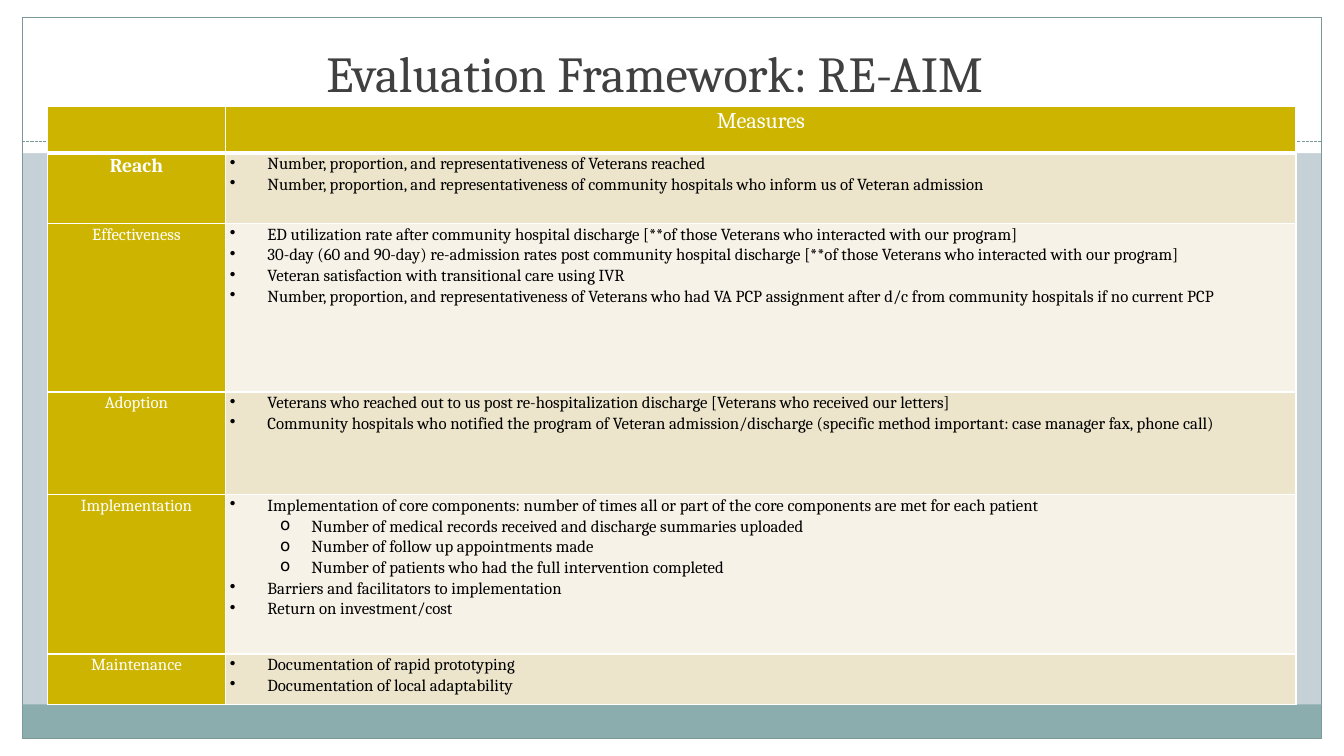
import dataclasses

import pptx
import pptx.dml.color
import pptx.enum.dml
import pptx.enum.shapes
import pptx.enum.text
import pptx.oxml
import pptx.oxml.ns
import pptx.util

Cm = pptx.util.Cm
Pt = pptx.util.Pt
ALIGN = pptx.enum.text.PP_ALIGN


@dataclasses.dataclass(frozen=True)
class Theme:
    font: str = "Cambria"
    backdrop: str = "C5D1D7"
    white: str = "FFFFFF"
    black: str = "000000"
    footer: str = "8CADAE"
    rule: str = "7C999A"
    title: str = "404040"
    accent: str = "CCB400"
    bands: tuple = ("ECE5CC", "F6F2E7")
    title_size: int = 36
    header_size: int = 16
    lead_size: int = 14
    body_size: int = 12
    line_spacing: float = 1.07


WIDTH, HEIGHT = 33.87, 19.05
MARGIN, EDGE = 0.56, 0.43
COLUMN_WIDTHS = (4.5, 26.97)
ROW_HEIGHTS = (1.17, 1.78, 4.24, 2.59, 4.01, 1.27)
# Bullet by outline level: character, left margin, hanging indent
BULLETS = (("•", 0.95, 0.95), ("o", 2.06, 0.79))

# Dimension, then measures as (level, text)
MEASURES = (
    ("Reach", (
        (0, "Number, proportion, and representativeness of Veterans reached"),
        (0, "Number, proportion, and representativeness of community hospitals who inform us of Veteran admission"),
    )),
    ("Effectiveness", (
        (0, "ED utilization rate after community hospital discharge [**of those Veterans who interacted with our program]"),
        (0, "30-day (60 and 90-day) re-admission rates post community hospital discharge [**of those Veterans who interacted with our program]"),
        (0, "Veteran satisfaction with transitional care using IVR"),
        (0, "Number, proportion, and representativeness of Veterans who had VA PCP assignment after d/c from community hospitals if no current PCP"),
    )),
    ("Adoption", (
        (0, "Veterans who reached out to us post re-hospitalization discharge [Veterans who received our letters]"),
        (0, "Community hospitals who notified the program of Veteran admission/discharge (specific method important: case manager fax, phone call)"),
    )),
    ("Implementation", (
        (0, "Implementation of core components: number of times all or part of the core components are met for each patient"),
        (1, "Number of medical records received and discharge summaries uploaded"),
        (1, "Number of follow up appointments made"),
        (1, "Number of patients who had the full intervention completed"),
        (0, "Barriers and facilitators to implementation"),
        (0, "Return on investment/cost"),
    )),
    ("Maintenance", (
        (0, "Documentation of rapid prototyping"),
        (0, "Documentation of local adaptability"),
    )),
)


def rgb(color):
    return pptx.dml.color.RGBColor.from_string(color)


def apply(target, values):
    for name, value in values.items():
        setattr(target, name, value)


def element(tag, **attributes):
    node = pptx.oxml.parse_xml(f"<{tag} {pptx.oxml.ns.nsdecls('a')}/>")
    for name, value in attributes.items():
        node.set(name, str(value))
    return node


class SlideBuilder:
    def __init__(self, slide, theme):
        self.slide = slide
        self.theme = theme

    def background(self, color):
        fill = self.slide.background.fill
        fill.solid()
        fill.fore_color.rgb = rgb(color)

    def stroke(self, line, color):
        line.color.rgb = rgb(color)
        line.width = Pt(0.75)

    def rectangle(self, left, top, width, height, fill=None, line=None):
        box = self.slide.shapes.add_shape(
            pptx.enum.shapes.MSO_SHAPE.RECTANGLE, Cm(left), Cm(top), Cm(width), Cm(height))
        box.shadow.inherit = False
        if fill:
            box.fill.solid()
            box.fill.fore_color.rgb = rgb(fill)
        else:
            box.fill.background()
        if line:
            self.stroke(box.line, line)
        else:
            box.line.fill.background()

    def dashed_line(self, left, right, y, color):
        line = self.slide.shapes.add_connector(
            pptx.enum.shapes.MSO_CONNECTOR.STRAIGHT, Cm(left), Cm(y), Cm(right), Cm(y))
        self.stroke(line.line, color)
        line.line.dash_style = pptx.enum.dml.MSO_LINE.SQUARE_DOT
        line._element.spPr.append(element("a:effectLst"))

    def add_text(self, para, text, size, color, bold=False, align=ALIGN.CENTER, spacing=None):
        apply(para, {"alignment": align, "line_spacing": spacing})
        span = para.add_run()
        span.text = text
        apply(span.font, {"name": self.theme.font, "size": Pt(size), "bold": bold})
        span.font.color.rgb = rgb(color)

    def title(self, text, left, top, width, height):
        box = self.slide.shapes.add_textbox(Cm(left), Cm(top), Cm(width), Cm(height))
        apply(box.text_frame, {
            "word_wrap": True, "vertical_anchor": pptx.enum.text.MSO_ANCHOR.BOTTOM})
        self.add_text(box.text_frame.paragraphs[0], text, self.theme.title_size, self.theme.title)

    def table(self, left, top, widths, heights):
        frame = self.slide.shapes.add_table(
            len(heights), len(widths), Cm(left), Cm(top), Cm(sum(widths)), Cm(sum(heights)))
        table = frame.table
        apply(table, {"first_row": False, "horz_banding": False})
        for column, width in zip(table.columns, widths):
            column.width = Cm(width)
        for row, height in zip(table.rows, heights):
            row.height = Cm(height)
        return table

    def cell(self, cell, fill, bottom=1):
        apply(cell, {"margin_left": Cm(0.1), "margin_right": Cm(0.1),
                     "margin_top": 0, "margin_bottom": 0})
        cell.fill.solid()
        cell.fill.fore_color.rgb = rgb(fill)
        properties = cell._tc.get_or_add_tcPr()
        for place, (side, points) in enumerate(zip("LRTB", (1, 1, 1, bottom))):
            border = element(f"a:ln{side}", w=Pt(points))
            paint = element("a:solidFill")
            paint.append(element("a:srgbClr", val=self.theme.white))
            border.append(paint)
            properties.insert(place, border)

    def label(self, cell, text, size, bold=False):
        self.add_text(cell.text_frame.paragraphs[0], text, size, self.theme.white,
                      bold, spacing=self.theme.line_spacing)

    def bullets(self, cell, items):
        for number, (level, text) in enumerate(items):
            body = cell.text_frame
            para = body.add_paragraph() if number else body.paragraphs[0]
            para.level = level
            self.add_text(para, text, self.theme.body_size, self.theme.black,
                          align=ALIGN.LEFT, spacing=self.theme.line_spacing)
            mark, margin, hanging = BULLETS[level]
            properties = para._p.get_or_add_pPr()
            properties.set("marL", str(Cm(margin)))
            properties.set("indent", str(-Cm(hanging)))
            properties.append(element("a:buChar", char=mark))


def main():
    theme = Theme()
    deck = pptx.Presentation()
    apply(deck, {"slide_width": Cm(WIDTH), "slide_height": Cm(HEIGHT)})
    page = SlideBuilder(deck.slides.add_slide(deck.slide_layouts[6]), theme)

    # White surround, footer band, frame and dashed rule
    page.background(theme.backdrop)
    inner_width = WIDTH - 2 * MARGIN
    for area in ((0, HEIGHT - EDGE, WIDTH, EDGE), (0, 0, WIDTH, 3.86),
                 (0, 0, MARGIN, HEIGHT), (WIDTH - MARGIN, 0, MARGIN, HEIGHT)):
        page.rectangle(*area, fill=theme.white)
    page.rectangle(MARGIN, 17.75, inner_width, 0.87, fill=theme.footer)
    page.rectangle(MARGIN, EDGE, inner_width, HEIGHT - 2 * EDGE, line=theme.rule)
    page.dashed_line(MARGIN, WIDTH - MARGIN, 3.56, theme.rule)

    page.title("Evaluation Framework: RE-AIM", 5.31, 0, 22.38, 2.72)

    # Table header
    table = page.table(1.19, 2.69, COLUMN_WIDTHS, ROW_HEIGHTS)
    for column in range(len(COLUMN_WIDTHS)):
        page.cell(table.cell(0, column), theme.accent, bottom=3)
    page.label(table.cell(0, 1), "Measures", theme.header_size)

    # One row per dimension, the first one emphasised
    for row, (dimension, items) in enumerate(MEASURES, start=1):
        name, measures = table.cell(row, 0), table.cell(row, 1)
        lead = row == 1
        page.cell(name, theme.accent)
        page.label(name, dimension, theme.lead_size if lead else theme.body_size, lead)
        page.cell(measures, theme.bands[(row - 1) % 2])
        page.bullets(measures, items)

    deck.save("out.pptx")


if __name__ == "__main__":
    main()
